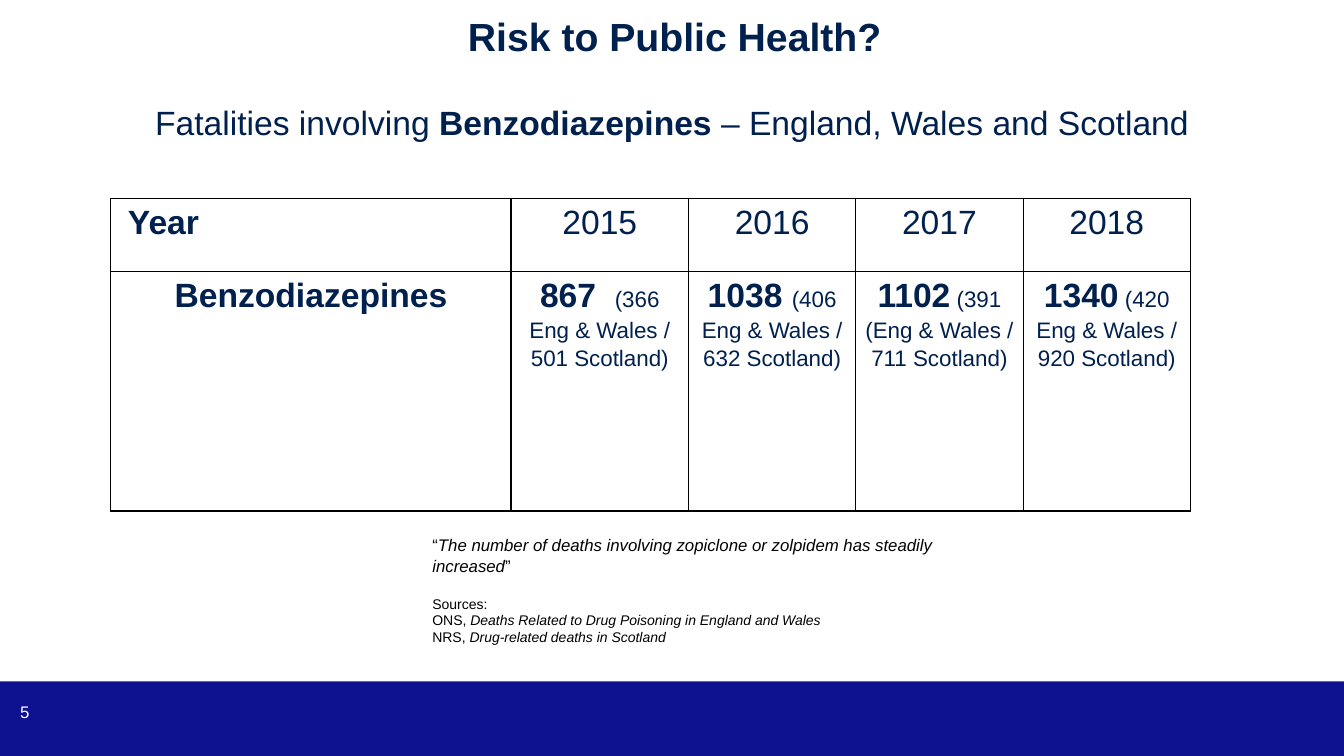
from dataclasses import dataclass

from lxml.etree import SubElement
from pptx import Presentation
from pptx.dml.color import RGBColor
from pptx.enum.shapes import MSO_SHAPE
from pptx.enum.text import MSO_ANCHOR, PP_ALIGN
from pptx.oxml.ns import qn
from pptx.util import Inches, Pt


@dataclass(frozen=True)
class Theme:
    font: str = "Arial"
    navy: str = "00204E"
    bar: str = "0F1290"
    white: str = "FFFFFF"
    black: str = "000000"
    heading: int = 28
    body: int = 24
    detail: int = 16
    note: int = 12
    source: int = 10


class Deck:
    def __init__(self, theme):
        self.theme = theme
        self.prs = Presentation()
        self.prs.slide_width = Inches(13.33)
        self.prs.slide_height = Inches(7.5)
        self.s = self.prs.slides.add_slide(self.prs.slide_layouts[5])

    def x(self, percent):
        return round(self.prs.slide_width * percent / 100)

    def y(self, percent):
        return round(self.prs.slide_height * percent / 100)

    def box(self, left, top, width, height):
        return self.x(left), self.y(top), self.x(width), self.y(height)

    def add_runs(self, p, runs, size, color, align=PP_ALIGN.LEFT):
        p.alignment = align
        for text, style in runs:
            r = p.add_run()
            r.text = text
            r.font.name = self.theme.font
            r.font.size = Pt(style.get("size", size))
            r.font.bold = style.get("bold", False)
            r.font.italic = style.get("italic", False)
            r.font.color.rgb = RGBColor.from_string(color)

    def title(self, area, runs):
        sp = self.s.shapes.title
        sp.left, sp.top, sp.width, sp.height = self.box(*area)
        tf = sp.text_frame
        tf.margin_left = tf.margin_right = tf.margin_top = tf.margin_bottom = 0
        tf.vertical_anchor = MSO_ANCHOR.TOP
        self.add_runs(tf.paragraphs[0], runs, self.theme.body, self.theme.navy, PP_ALIGN.CENTER)

    def rect(self, area, color):
        sp = self.s.shapes.add_shape(MSO_SHAPE.RECTANGLE, *self.box(*area))
        sp.shadow.inherit = False
        sp.fill.solid()
        sp.fill.fore_color.rgb = RGBColor.from_string(color)
        sp.line.fill.background()

    def text(self, area, lines, color, align=PP_ALIGN.LEFT):
        tf = self.s.shapes.add_textbox(*self.box(*area)).text_frame
        tf.word_wrap = True
        for i, (runs, size, before) in enumerate(lines):
            p = tf.add_paragraph() if i else tf.paragraphs[0]
            p.space_before = Pt(before)
            self.add_runs(p, runs, size, color, align)
        return tf

    def border(self, cell):
        tcPr = cell._tc.get_or_add_tcPr()
        for i, side in enumerate(("a:lnL", "a:lnR", "a:lnT", "a:lnB")):
            ln = tcPr.makeelement(qn(side), {"w": str(Pt(1))})
            fill = SubElement(ln, qn("a:solidFill"))
            SubElement(fill, qn("a:srgbClr"), val=self.theme.black)
            tcPr.insert(i, ln)

    def table(self, left, top, cols, rows, content):
        area = self.box(left, top, sum(cols), sum(rows))
        tbl = self.s.shapes.add_table(len(rows), len(cols), *area).table
        tbl.first_row = tbl.horz_banding = False
        for col, width in zip(tbl.columns, cols):
            col.width = self.x(width)
        for row, height in zip(tbl.rows, rows):
            row.height = self.y(height)
        for row, values in zip(tbl.rows, content):
            for cell, (runs, align, inset) in zip(row.cells, values):
                cell.fill.background()
                cell.margin_left, cell.margin_right = Inches(inset), Inches(0.08)
                cell.margin_top = cell.margin_bottom = 0
                p = cell.text_frame.paragraphs[0]
                p.line_spacing = 1.15
                p.space_after = Pt(10)
                self.add_runs(p, runs, self.theme.body, self.theme.navy, align)
                self.border(cell)


def main():
    theme = Theme()
    deck = Deck(theme)
    bold, italic, small = {"bold": True}, {"italic": True}, {"size": theme.detail}

    deck.rect((0, 90.13, 100, 9.87), theme.bar)
    number = deck.text((0, 90.13, 5.93, 8), [([("5", {})], theme.note, 0)], theme.white)
    number.margin_left = Inches(0.2)
    number.vertical_anchor = MSO_ANCHOR.MIDDLE

    deck.title((6.9, 13.47, 86.2, 10), [
        ("Fatalities involving ", {}),
        ("Benzodiazepines", bold),
        (" – England, Wales and Scotland", {}),
    ])

    deaths = [
        ("2015", "867  ", "(366 Eng & Wales / 501 Scotland)"),
        ("2016", "1038 ", "(406 Eng & Wales / 632 Scotland)"),
        ("2017", "1102", " (391 (Eng & Wales / 711 Scotland)"),
        ("2018", "1340", " (420 Eng & Wales / 920 Scotland)"),
    ]
    center = PP_ALIGN.CENTER
    years = [([("Year", bold)], PP_ALIGN.LEFT, 0.17)]
    totals = [([("Benzodiazepines", bold)], center, 0.08)]
    for year, total, split in deaths:
        years.append(([(year, {})], center, 0.08))
        totals.append(([(total, bold), (split, small)], center, 0.08))
    deck.table(8.25, 26.27, [29.78, 13.2] + [12.45] * 3, [9.6, 31.73], [years, totals])

    deck.text((31.43, 0.93, 34.88, 7.6),
              [([("Risk to Public Health?", bold)], theme.heading, 0)],
              theme.navy, PP_ALIGN.RIGHT)

    quote = "The number of deaths involving zopiclone or zolpidem has steadily increased"
    deck.text((31.43, 70.13, 43.59, 16.13), [
        ([("“", {}), (quote, italic), ("”", {})], theme.note, 0),
        ([("Sources:", {})], theme.source, 14),
        ([("ONS, ", {}), ("Deaths Related to Drug Poisoning in England and Wales", italic)],
         theme.source, 0),
        ([("NRS, ", {}), ("Drug-related deaths in Scotland", italic)], theme.source, 0),
    ], theme.black)

    deck.prs.save("out.pptx")


if __name__ == "__main__":
    main()
